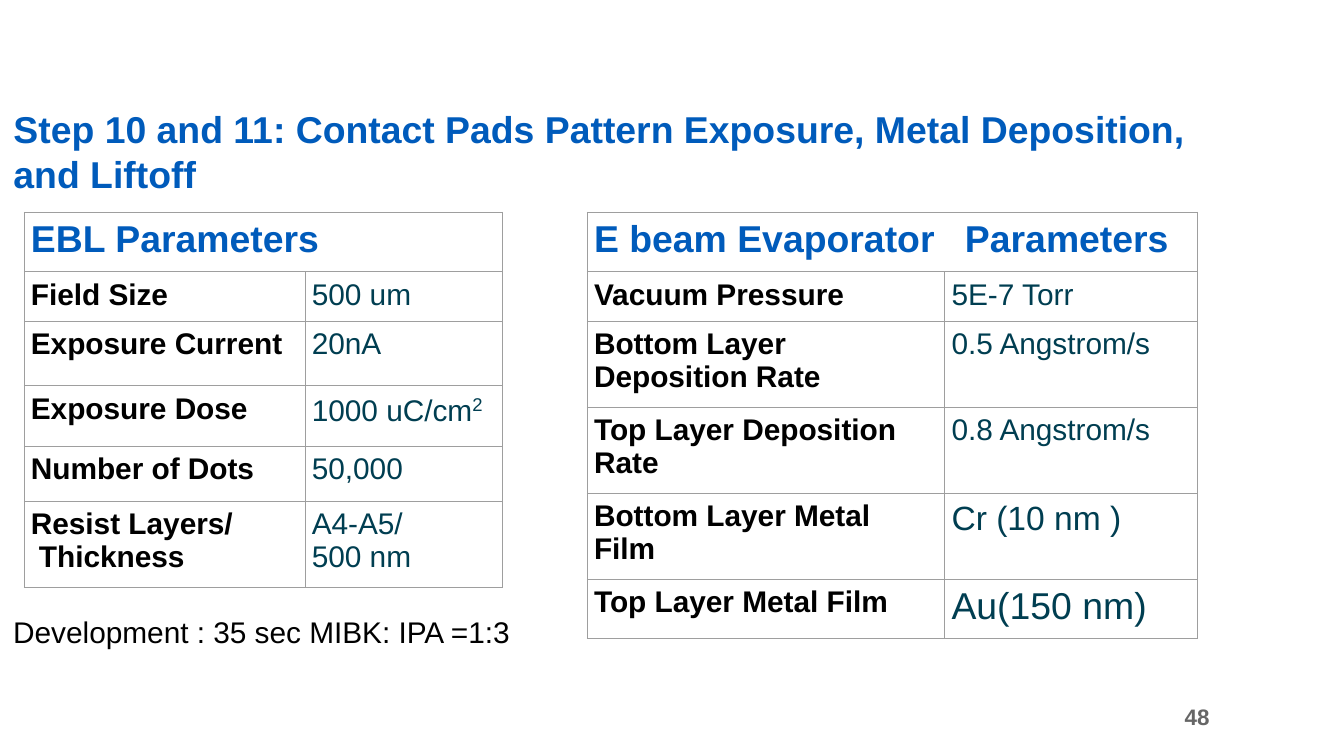
from dataclasses import dataclass

from lxml.etree import SubElement
from pptx import Presentation
from pptx.dml.color import RGBColor
from pptx.enum.text import MSO_ANCHOR, MSO_AUTO_SIZE as AutoSize, PP_ALIGN
from pptx.oxml.ns import qn
from pptx.util import Inches, Pt


@dataclass(frozen=True)
class Theme:
    font: str = "Arial"
    heading: str = "005BBB"
    label: str = "000000"
    value: str = "003E51"
    number: str = "666666"
    border: str = "9E9E9E"
    heading_size: int = 20
    body_size: int = 16
    superscript_size: int = 17
    number_size: int = 12


theme = Theme()


def style_text(text_frame, size, color, bold=False):
    for paragraph in text_frame.paragraphs:
        paragraph.alignment = PP_ALIGN.LEFT
        for run in paragraph.runs:
            run.font.name = theme.font
            run.font.size = Pt(size)
            run.font.bold = bold
            run.font.color.rgb = RGBColor.from_string(color)


def style_cell(cell):
    """Give a cell its margins, thin borders and no fill."""
    cell.margin_left = cell.margin_right = Inches(0.05)
    cell.margin_top = cell.margin_bottom = Inches(0.05)
    properties = cell._tc.get_or_add_tcPr()
    for side in ("a:lnL", "a:lnR", "a:lnT", "a:lnB"):
        line = SubElement(properties, qn(side), w=str(Pt(0.5)))
        fill = SubElement(line, qn("a:solidFill"))
        SubElement(fill, qn("a:srgbClr"), val=theme.border)
    cell.fill.background()


presentation = Presentation()
# A 16:9 page, ten inches wide
presentation.slide_width = Inches(10)
presentation.slide_height = Inches(10 * 9 / 16)
slide = presentation.slides.add_slide(presentation.slide_layouts[5])

title = slide.shapes.title
title.left, title.top = Inches(0), Inches(0.74)
title.width, title.height = Inches(9.46), Inches(0.77)
title.text_frame.text = (
    "Step 10 and 11: Contact Pads Pattern Exposure, Metal Deposition, and Liftoff"
)
title.text_frame.word_wrap = True
title.text_frame.auto_size = AutoSize.SHAPE_TO_FIT_TEXT
title.text_frame.vertical_anchor = MSO_ANCHOR.TOP
style_text(title.text_frame, theme.heading_size, theme.heading, True)

# Each row holds a label, a value, the value's size and the row height.
body = theme.body_size
tables = [
    (0.18, (2.09, 1.47), "EBL Parameters", [
        ("Field Size", "500 um", body, 0.37),
        ("Exposure Current", "20nA", body, 0.48),
        ("Exposure Dose", "1000 uC/cm", body, 0.45),
        ("Number of Dots", "50,000", body, 0.41),
        ("Resist Layers/\nThickness", "A4-A5/\n500 nm", body, 0.64),
    ]),
    (4.37, (2.66, 1.88), "E beam Evaporator\tParameters", [
        ("Vacuum Pressure", "5E-7 Torr", body, 0.37),
        ("Bottom Layer Deposition Rate", "0.5 Angstrom/s", body, 0.64),
        ("Top Layer Deposition Rate", "0.8 Angstrom/s", body, 0.64),
        ("Bottom Layer Metal Film", "Cr (10 nm )", 18, 0.64),
        ("Top Layer Metal Film", "Au(150 nm)", 20, 0.44),
    ]),
]

header_height = 0.44
built_tables = []
for left, widths, heading, rows in tables:
    height = header_height + sum(row[3] for row in rows)
    table = slide.shapes.add_table(
        len(rows) + 1, 2, Inches(left), Inches(1.58),
        Inches(sum(widths)), Inches(height),
    ).table
    table.first_row = table.horz_banding = False
    for column, width in zip(table.columns, widths):
        column.width = Inches(width)
    for cell in table.iter_cells():
        style_cell(cell)

    table.rows[0].height = Inches(header_height)
    header = table.cell(0, 0)
    header.merge(table.cell(0, 1))
    header.text_frame.text = heading
    style_text(header.text_frame, theme.heading_size, theme.heading, True)

    for index, (label, value, size, row_height) in enumerate(rows, start=1):
        table.rows[index].height = Inches(row_height)
        label_frame = table.cell(index, 0).text_frame
        label_frame.text = label
        style_text(label_frame, theme.body_size, theme.label, True)
        value_frame = table.cell(index, 1).text_frame
        value_frame.text = value
        style_text(value_frame, size, theme.value)
    built_tables.append(table)

ebl_table, evaporator_table = built_tables

dose_frame = ebl_table.cell(3, 1).text_frame
dose_frame.paragraphs[0].add_run().text = "2"
style_text(dose_frame, theme.body_size, theme.value)
exponent = dose_frame.paragraphs[0].runs[-1]
exponent.font.size = Pt(theme.superscript_size)
exponent.font._element.set("baseline", "30000")

thickness = ebl_table.cell(5, 0).text_frame.paragraphs[1]
thickness._p.get_or_add_pPr().set("marL", str(Inches(0.06)))

evaporator_heading = evaporator_table.cell(0, 0).text_frame.paragraphs[0]
tab_list = SubElement(evaporator_heading._p.get_or_add_pPr(), qn("a:tabLst"))
SubElement(tab_list, qn("a:tab"), pos=str(Inches(2.76)), algn="l")

development = slide.shapes.add_textbox(
    Inches(0), Inches(4.52), Inches(5.03), Inches(0.37)
).text_frame
development.word_wrap = True
development.auto_size = AutoSize.SHAPE_TO_FIT_TEXT
development.text = "Development : 35 sec MIBK: IPA =1:3"
style_text(development, theme.body_size, theme.label)

page_number = slide.shapes.add_textbox(
    Inches(5.69), Inches(5.18), Inches(3.38), Inches(0.3)
).text_frame
page_number.word_wrap = True
page_number.vertical_anchor = MSO_ANCHOR.MIDDLE
page_number.margin_left = page_number.margin_right = Inches(0.07)
page_number.margin_top = page_number.margin_bottom = Inches(0.04)
page_number.text = "48"
style_text(page_number, theme.number_size, theme.number, True)
page_number.paragraphs[0].alignment = PP_ALIGN.RIGHT

presentation.save("out.pptx")
